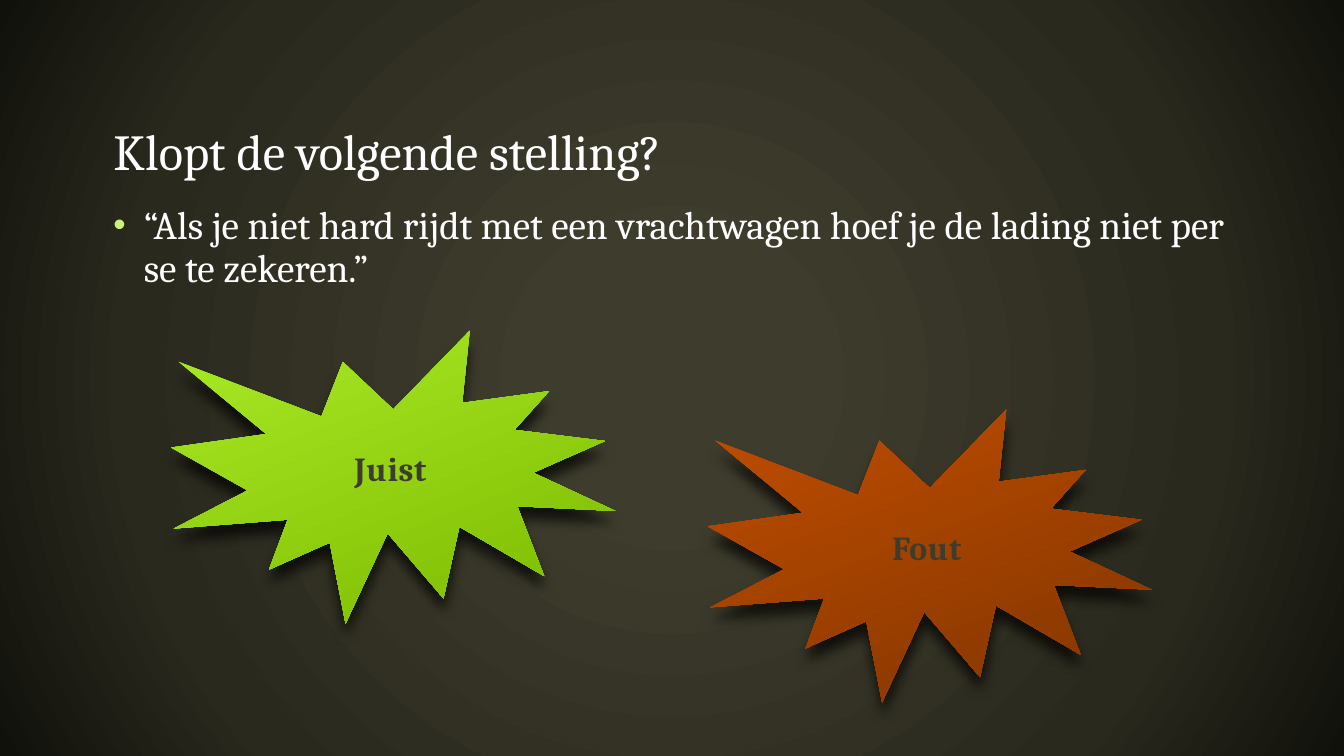
from lxml import etree
from pptx import Presentation
from pptx.dml.color import RGBColor
from pptx.enum.shapes import MSO_SHAPE
from pptx.enum.text import MSO_ANCHOR, MSO_AUTO_SIZE, PP_ALIGN
from pptx.oxml.ns import qn
from pptx.util import Pt

EMU_PER_PX = 9525
SEAL = MSO_SHAPE.EXPLOSION1
LEFT, CENTER = PP_ALIGN.LEFT, PP_ALIGN.CENTER
TOP, MIDDLE, BOTTOM = MSO_ANCHOR.TOP, MSO_ANCHOR.MIDDLE, MSO_ANCHOR.BOTTOM
NO_AUTOFIT = MSO_AUTO_SIZE.NONE
DRAWING_NS = "http://schemas.openxmlformats.org/drawingml/2006/main"

FONT = "Cambria"
WHITE, OLIVE, BULLET_GREEN = "FFFFFF", "3E3D2D", "CAF278"
BACKDROP_STOPS = [(17, OLIVE), (71, "2A291E"), (100, "11110C")]
RADIAL = '<a:path path="circle"><a:fillToRect l="50000" t="50000" r="50000" b="50000"/></a:path>'
DIAGONAL = '<a:lin ang="4140000" scaled="0"/>'
SEAL_SIZE = (423, 279)
ANSWERS = [
    ("Juist", (163, 315), ("A9EA25", "7CB900")),
    ("Fout", (674, 390), ("BF4D00", "823500")),
]


def px(length):
    """Turn pixels into EMU."""
    return length * EMU_PER_PX


def rgb(code):
    """Turn a hex string into a colour."""
    return RGBColor.from_string(code)


def drawing_xml(tag, attributes="", content=""):
    """Parse one DrawingML element."""
    return etree.fromstring(f'<a:{tag} xmlns:a="{DRAWING_NS}" {attributes}>{content}</a:{tag}>')


def set_gradient(fill, properties, stops, direction):
    """Fill the owner of the given properties with a gradient."""
    fill.solid()
    solid = properties.find(qn("a:solidFill"))
    marks = "".join(
        f'<a:gs pos="{position * 1000}"><a:srgbClr val="{code}"/></a:gs>'
        for position, code in stops
    )
    gradient = drawing_xml("gradFill", 'rotWithShape="1"', f"<a:gsLst>{marks}</a:gsLst>{direction}")
    properties.replace(solid, gradient)


def write_text(holder, text, size, color=WHITE, bold=False, align=LEFT, anchor=TOP,
               line_spacing=1.0, space_before=0, tracking=0, insets=(12, 7)):
    """Write one formatted paragraph and return it."""
    frame = holder.text_frame
    frame.word_wrap = True
    frame.auto_size = NO_AUTOFIT
    frame.vertical_anchor = anchor
    frame.margin_left = frame.margin_right = px(insets[0])
    frame.margin_top = frame.margin_bottom = px(insets[1])
    paragraph = frame.paragraphs[0]
    paragraph.alignment = align
    paragraph.line_spacing = line_spacing
    paragraph.space_before = Pt(space_before)
    run = paragraph.add_run()
    run.text = text
    run.font.name = FONT
    run.font.size = Pt(size)
    run.font.bold = bold
    run.font.color.rgb = rgb(color)
    if tracking:
        run.font._element.set("spc", str(tracking))
    return paragraph


def place(holder, box):
    """Move a placeholder into a box."""
    holder.left, holder.top, holder.width, holder.height = map(px, box)


def add_question(slide, box):
    """Set the question as the slide title."""
    question = slide.shapes.title
    place(question, box)
    write_text(question, "Klopt de volgende stelling?", 36, anchor=BOTTOM, line_spacing=0.8)


def add_statement(slide, box):
    """Set the bulleted statement in the body."""
    statement = slide.placeholders[1]
    place(statement, box)
    paragraph = write_text(
        statement,
        "“Als je niet hard rijdt met een vrachtwagen hoef je de lading niet per se te zekeren.”",
        28, line_spacing=0.9, space_before=16,
    )
    properties = paragraph._p.get_or_add_pPr()
    properties.set("marL", str(px(29)))
    properties.set("indent", str(px(-29)))
    properties.append(drawing_xml("buClr", content=f'<a:srgbClr val="{BULLET_GREEN}"/>'))
    properties.append(drawing_xml("buSzPct", 'val="90000"'))
    properties.append(drawing_xml("buFont", 'typeface="Arial"'))
    properties.append(drawing_xml("buChar", 'char="•"'))


def add_answer(slide, box, label, colors):
    """Add a starburst with one possible answer."""
    seal = slide.shapes.add_shape(SEAL, *map(px, box))
    properties = seal.element.spPr
    set_gradient(seal.fill, properties, list(zip((0, 100), colors)), DIAGONAL)
    seal.line.fill.background()
    seal.shadow.inherit = False
    properties.find(qn("a:effectLst")).append(drawing_xml(
        "outerShdw",
        f'blurRad="{Pt(9)}" dist="{Pt(9)}" dir="5400000" rotWithShape="0"',
        '<a:srgbClr val="000000"><a:alpha val="70000"/></a:srgbClr>',
    ))
    write_text(seal, label, 24, color=OLIVE, bold=True, align=CENTER, anchor=MIDDLE,
               tracking=50, insets=(10, 5))


def build_quiz_slide(deck):
    """Build the true-or-false slide."""
    slide = deck.slides.add_slide(deck.slide_layouts[1])
    backdrop = slide.background.fill
    set_gradient(backdrop, slide.element.find(".//" + qn("p:bgPr")), BACKDROP_STOPS, RADIAL)
    add_question(slide, (96, 51, 1088, 128))
    add_statement(slide, (96, 189, 1088, 469))
    for label, corner, colors in ANSWERS:
        add_answer(slide, corner + SEAL_SIZE, label, colors)


def main():
    """Create and save the presentation."""
    deck = Presentation()
    deck.slide_width, deck.slide_height = px(1280), px(720)
    build_quiz_slide(deck)
    deck.save("out.pptx")


if __name__ == "__main__":
    main()
